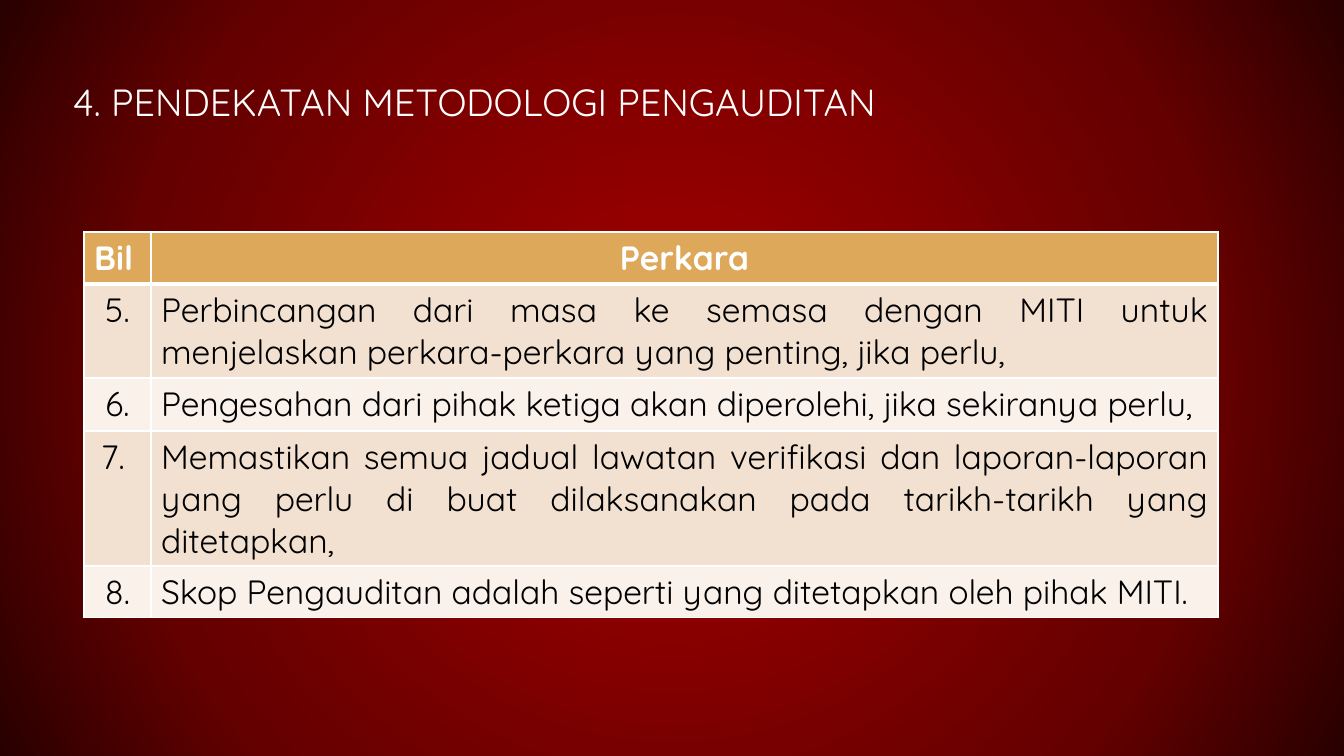
import pptx
import pptx.dml.color
import pptx.enum.text
import pptx.oxml
import pptx.oxml.ns
import pptx.util

ALIGN = pptx.enum.text.PP_ALIGN
WHITE, BLACK, GOLD = "FFFFFF", "000000", "DDA859"
BANDS = ("F2E1D1", "F9F1EA")
ROW_HEIGHTS = (52, 94, 53, 135, 52)
COLUMN_WIDTHS = (67, 1067)
HEADER = ("Bil", "Perkara")
ITEMS = (
    ("5.", "Perbincangan dari masa ke semasa dengan MITI untuk "
           "menjelaskan perkara-perkara yang penting, jika perlu,"),
    ("6.", "Pengesahan dari pihak ketiga akan diperolehi, jika sekiranya perlu,"),
    ("7. ", "Memastikan semua jadual lawatan verifikasi dan laporan-laporan "
            "yang perlu di buat dilaksanakan pada tarikh-tarikh yang ditetapkan,"),
    ("8.", "Skop Pengauditan adalah seperti yang ditetapkan oleh pihak MITI."),
)


def px(length):
    return pptx.util.Emu(round(length * 12192000 / 1344))


def color(value):
    return pptx.dml.color.RGBColor.from_string(value)


def xml(text):
    return pptx.oxml.parse_xml(text.replace(">", f" {pptx.oxml.ns.nsdecls('a')}>", 1))


class SlideBuilder:
    """Holds the text style and the slide being built."""

    def __init__(self, slide, font_name):
        self.slide = slide
        self.font_name = font_name

    def background(self, stops):
        self.slide.background.fill.gradient()
        gradient = self.slide.element.xpath(".//p:bgPr/a:gradFill")[0]
        stop_xml = "".join(
            f'<a:gs pos="{percent * 1000}"><a:srgbClr val="{value}"/></a:gs>'
            for percent, value in stops)
        gradient.getparent().replace(gradient, xml(
            f'<a:gradFill rotWithShape="1"><a:gsLst>{stop_xml}</a:gsLst><a:path path="circle">'
            '<a:fillToRect l="50000" t="50000" r="50000" b="50000"/></a:path></a:gradFill>'))

    def set_text(self, paragraph, text, size, value, bold=False, align=ALIGN.LEFT):
        paragraph.text = text
        paragraph.alignment = align
        font = paragraph.font
        font.name, font.size, font.bold = self.font_name, pptx.util.Pt(size), bold
        font.color.rgb = color(value)

    def title(self, text, left, top, width, height):
        shape = self.slide.shapes.add_textbox(px(left), px(top), px(width), px(height))
        frame = shape.text_frame
        frame.word_wrap = True
        frame.margin_left = frame.margin_right = px(13)
        frame.margin_top = frame.margin_bottom = px(7)
        paragraph = frame.paragraphs[0]
        self.set_text(paragraph, text, 27, WHITE)
        paragraph.line_spacing = 0.9
        paragraph.space_before = pptx.util.Pt(16)

    def cell(self, cell, text, fill, value, bold, align, borders):
        self.set_text(cell.text_frame.paragraphs[0], text, 24, value, bold, align)
        cell.fill.solid()
        cell.fill.fore_color.rgb = color(fill)
        properties = cell._tc.get_or_add_tcPr()
        for index, (side, width) in enumerate(zip("LRTB", borders)):
            properties.insert(index, xml(
                f'<a:ln{side} w="{pptx.util.Pt(width)}"><a:solidFill><a:srgbClr val="{WHITE}"/>'
                f'</a:solidFill></a:ln{side}>'))

    def table(self, left, top):
        rows = (HEADER, *ITEMS)
        table = self.slide.shapes.add_table(
            len(rows), len(HEADER), px(left), px(top),
            px(sum(COLUMN_WIDTHS)), px(sum(ROW_HEIGHTS))).table
        for column, width in zip(table.columns, COLUMN_WIDTHS):
            column.width = px(width)
        for row, height in zip(table.rows, ROW_HEIGHTS):
            row.height = px(height)
        for index, texts in enumerate(rows):
            if index == 0:
                style, aligns = (GOLD, WHITE, True), (ALIGN.LEFT, ALIGN.CENTER)
            else:
                style = (BANDS[(index - 1) % 2], BLACK, False)
                aligns = (ALIGN.CENTER, ALIGN.JUSTIFY)
            borders = (1, 1, 3 if index == 1 else 1, 3 if index == 0 else 1)
            for column, text in enumerate(texts):
                self.cell(table.cell(index, column), text, *style, aligns[column], borders)


def main():
    presentation = pptx.Presentation()
    presentation.slide_width, presentation.slide_height = px(1344), px(756)
    slide = presentation.slides.add_slide(presentation.slide_layouts[6])
    builder = SlideBuilder(slide, "Quicksand")
    builder.background(((17, "960000"), (71, "650000"), (100, "290000")))
    builder.title("4. PENDEKATAN METODOLOGI PENGAUDITAN", 60, 77, 1183, 84)
    builder.table(84, 232)
    presentation.save("out.pptx")


if __name__ == "__main__":
    main()
